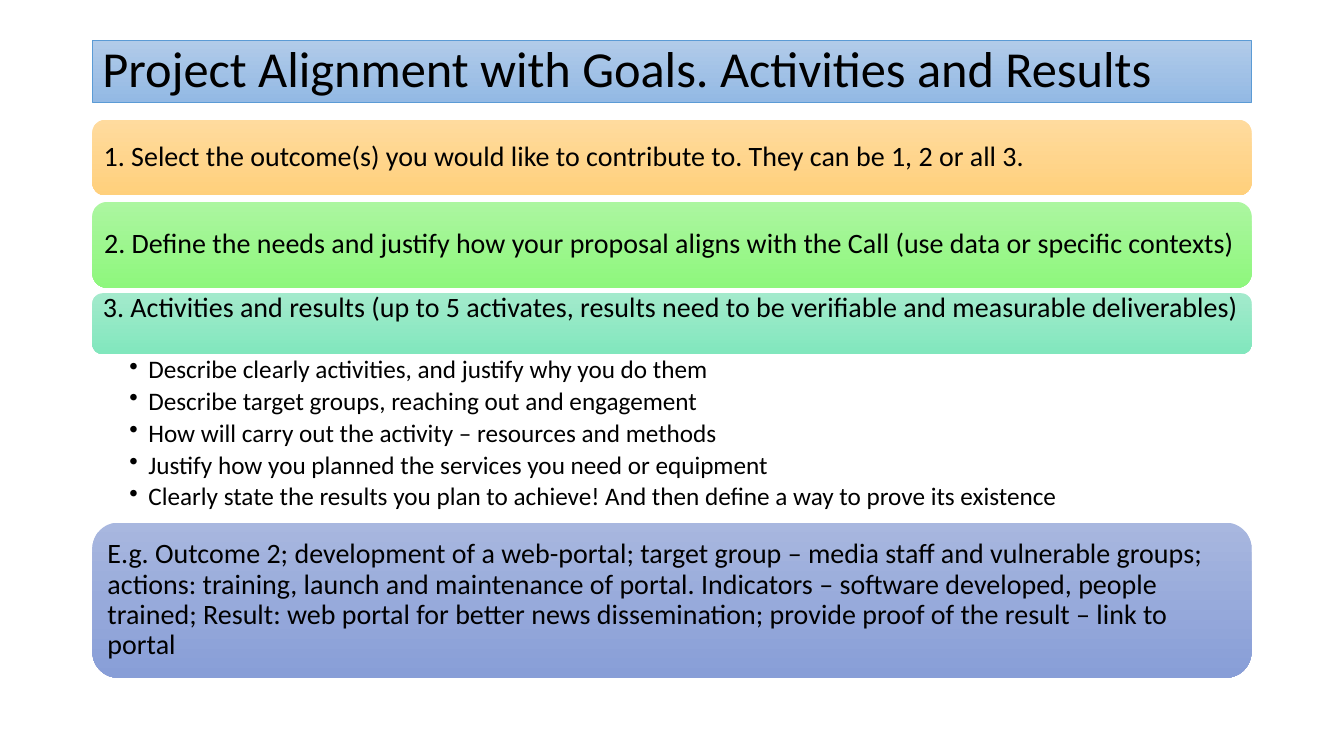
from lxml import etree
from pptx import Presentation
from pptx.dml.color import RGBColor
from pptx.enum import shapes, text
from pptx.oxml import ns
from pptx.util import Cm, Pt

# Content
TITLE = "Project Alignment with Goals. Activities and Results"
SELECT = "1. Select the outcome(s) you would like to contribute to. They can be 1, 2 or all 3."
DEFINE = ("2. Define the needs and justify how your proposal aligns with the Call "
          "(use data or specific contexts)")
ACTIVITIES = ("3. Activities and results (up to 5 activates, results need to be "
              "verifiable and measurable deliverables)")
EXAMPLE = ("E.g. Outcome 2; development of a web-portal; target group – media staff and "
           "vulnerable groups; actions: training, launch and maintenance of portal. "
           "Indicators – software developed, people trained; Result: web portal for better "
           "news dissemination; provide proof of the result – link to portal")
BULLETS = [
    "Describe clearly activities, and justify why you do them",
    "Describe target groups, reaching out and engagement",
    "How will carry out the activity – resources and methods",
    "Justify how you planned the services you need or equipment",
    "Clearly state the results you plan to achieve! And then define a way to prove its existence",
]

# Colours: top and bottom of each gradient
BLACK = RGBColor(0x00, 0x00, 0x00)
BORDER = RGBColor(0x5B, 0x9B, 0xD5)
BLUE = RGBColor(0xB1, 0xCB, 0xE9), RGBColor(0x93, 0xB9, 0xE4)
ORANGE = RGBColor(0xFF, 0xDB, 0x9E), RGBColor(0xFF, 0xD0, 0x7C)
GREEN = RGBColor(0xAC, 0xF6, 0xA0), RGBColor(0x8E, 0xF7, 0x7D)
TEAL = RGBColor(0xA3, 0xEA, 0xCC), RGBColor(0x81, 0xE7, 0xBD)
INDIGO = RGBColor(0xA8, 0xB7, 0xDF), RGBColor(0x88, 0x9E, 0xD7)

# Layout in cm
LEFT, WIDTH = 2.33, 29.21
PAD = 0.19
BULLET_TOP, BULLET_HEIGHT = 8.92, 4.25

# Bars: text, gradient, top, height, bottom padding
BARS = [
    (SELECT, ORANGE, 3.02, 1.9, PAD),
    (DEFINE, GREEN, 5.09, 2.16, PAD),
    (ACTIVITIES, TEAL, 7.39, 1.53, 0.74),
    (EXAMPLE, INDIGO, 13.17, 3.91, PAD),
]


def set_insets(tf, left, top, right, bottom):
    tf.word_wrap = True
    tf.margin_left, tf.margin_top = Cm(left), Cm(top)
    tf.margin_right, tf.margin_bottom = Cm(right), Cm(bottom)


def style(p, size):
    p.alignment = text.PP_ALIGN.LEFT
    p.line_spacing = 0.9
    p.font.name, p.font.size = "Calibri", Pt(size)
    p.font.color.rgb = BLACK


def add_bar(kind, top, height, colours, words, size):
    sp = s.shapes.add_shape(kind, Cm(LEFT), Cm(top), Cm(WIDTH), Cm(height))
    sp.shadow.inherit = False
    sp.fill.gradient()
    sp.fill.gradient_angle = 270
    for stop, colour in zip(sp.fill.gradient_stops, colours):
        stop.color.rgb = colour
    sp.line.fill.background()
    tf = sp.text_frame
    tf.vertical_anchor = text.MSO_ANCHOR.MIDDLE
    tf.text = words
    style(tf.paragraphs[0], size)
    return sp


prs = Presentation()
prs.slide_width, prs.slide_height = Cm(33.87), Cm(19.05)
s = prs.slides.add_slide(prs.slide_layouts[6])

# Title
title = add_bar(shapes.MSO_SHAPE.RECTANGLE, 1.02, 1.56, BLUE, TITLE, 36)
title.line.color.rgb = BORDER
title.line.width = Pt(0.5)
set_insets(title.text_frame, 0.25, 0.13, 0.25, 0.13)

# Step bars and example
for words, colours, top, height, bottom in BARS:
    bar = add_bar(shapes.MSO_SHAPE.ROUNDED_RECTANGLE, top, height, colours, words, 20)
    set_insets(bar.text_frame, PAD, PAD if bottom == PAD else 0, PAD, bottom)

# Bullets under step 3
box = s.shapes.add_textbox(Cm(LEFT), Cm(BULLET_TOP), Cm(WIDTH), Cm(BULLET_HEIGHT))
tf = box.text_frame
set_insets(tf, 0.93, 0.08, 0.36, 0.08)
for i, words in enumerate(BULLETS):
    p = tf.add_paragraph() if i else tf.paragraphs[0]
    p.text = words
    style(p, 18)
    p.space_after = Pt(3.2)
    pPr = p._p.get_or_add_pPr()
    pPr.set("marL", str(Cm(0.48)))
    pPr.set("indent", str(-Cm(0.48)))
    bullet = etree.Element(ns.qn("a:buChar"), char="•")
    pPr.insert_element_before(bullet, "a:tabLst", "a:defRPr", "a:extLst")

prs.save("out.pptx")
